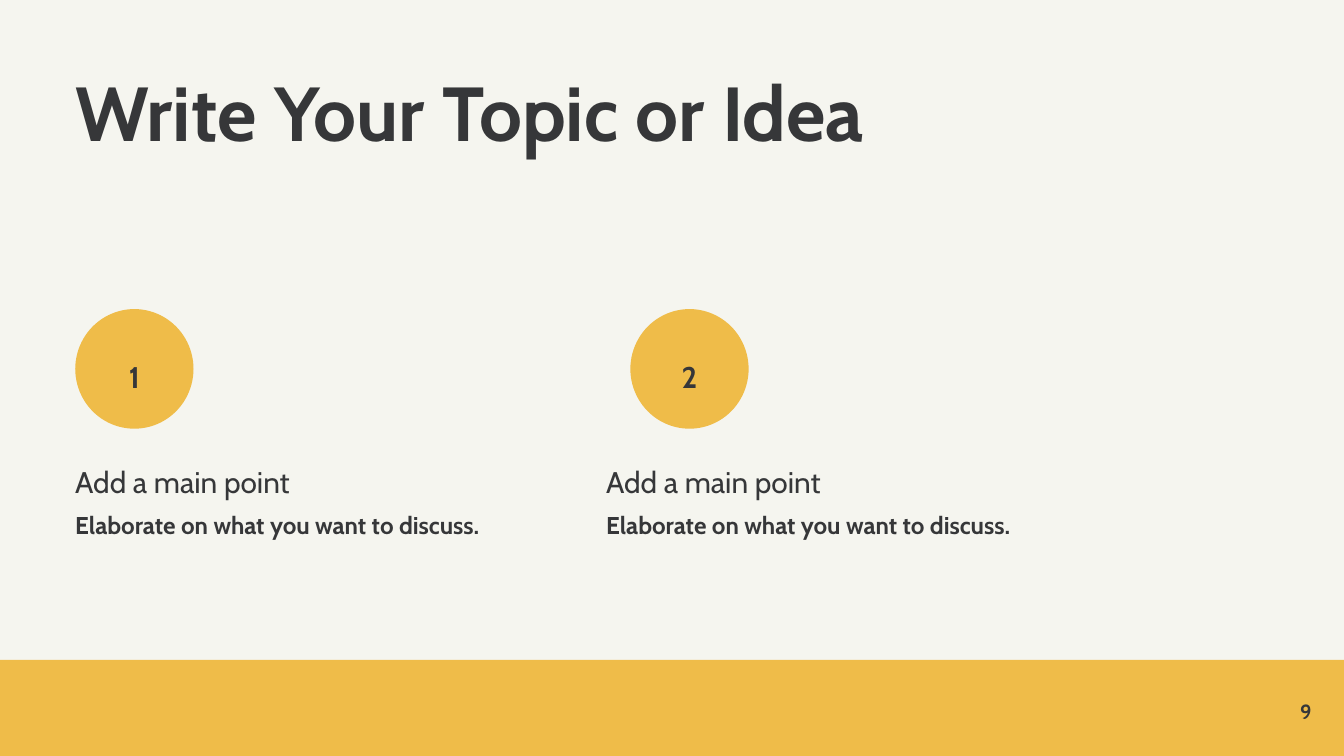
from pptx import Presentation
from pptx.dml.color import RGBColor
from pptx.enum.shapes import MSO_SHAPE
from pptx.enum.text import MSO_ANCHOR, MSO_AUTO_SIZE, PP_ALIGN
from pptx.util import Inches, Pt
from lxml.etree import SubElement
from pptx.oxml.ns import qn

COLORS = {"paper": "F5F5EF", "ink": "363739", "accent": "EFBC49"}
FONT = "Cabin"


def write(shape, box, runs, align=PP_ALIGN.LEFT, spacing=1.0, anchor=MSO_ANCHOR.TOP):
    """Place a shape and fill it with one paragraph, one (text, size, bold) per line."""
    shape.left, shape.top, shape.width, shape.height = map(Inches, box)
    frame = shape.text_frame
    frame_format = {
        "margin_left": 0, "margin_top": 0, "margin_right": 0, "margin_bottom": 0,
        "word_wrap": True, "auto_size": MSO_AUTO_SIZE.NONE, "vertical_anchor": anchor,
    }
    for name, value in frame_format.items():
        setattr(frame, name, value)
    paragraph = frame.paragraphs[0]
    paragraph_format = {"alignment": align, "line_spacing": spacing, "space_before": Pt(0)}
    for name, value in paragraph_format.items():
        setattr(paragraph, name, value)
    for i, (text, size, bold) in enumerate(runs):
        if i:
            paragraph.add_line_break()
        run = paragraph.add_run()
        run.text = text
        font_format = {"name": FONT, "size": Pt(size), "bold": bold}
        for name, value in font_format.items():
            setattr(run.font, name, value)
        run.font.color.rgb = RGBColor.from_string(COLORS["ink"])
    return paragraph


def add_accent(kind, *box):
    accent = slide.shapes.add_shape(kind, *map(Inches, box))
    accent.shadow.inherit = False
    accent.fill.solid()
    accent.fill.fore_color.rgb = RGBColor.from_string(COLORS["accent"])
    accent.line.fill.background()


presentation = Presentation()
presentation.slide_width = Inches(10)
presentation.slide_height = Inches(10 * 9 / 16)
slide = presentation.slides.add_slide(presentation.slide_layouts[3])
slide.background.fill.solid()
slide.background.fill.fore_color.rgb = RGBColor.from_string(COLORS["paper"])

write(slide.shapes.title, (0.56, 0.56, 7.09, 0.79),
      [("Write Your Topic or Idea", 41, True)], spacing=0.9)

# Numbered points: number, circle left, text left
points = [(1, 0.56, 0.56), (2, 4.69, 4.51)]
for number, circle_left, text_left in points:
    add_accent(MSO_SHAPE.OVAL, circle_left, 2.3, 0.88, 0.89)
    label = slide.shapes.add_textbox(0, 0, 0, 0)
    write(label, (circle_left + 0.23, 2.6, 0.42, 0.27), [(str(number), 16, True)],
          PP_ALIGN.CENTER, 1.25)

    point = write(slide.placeholders[number], (text_left, 3.34, 3.46, 1.53),
                  [("Add a main point", 16, False),
                   ("Elaborate on what you want to discuss.", 13, True)], spacing=1.4)
    properties = point._p.get_or_add_pPr()
    properties.set("marL", "0")
    properties.set("indent", "0")
    SubElement(properties, qn("a:buNone"))

# Footer band, down to the bottom edge
band_top = 4.91
add_accent(MSO_SHAPE.RECTANGLE, 0, band_top, 10, presentation.slide_height.inches - band_top)
page_number = slide.shapes.add_textbox(0, 0, 0, 0)
write(page_number, (9.16, 5.19, 0.6, 0.2), [("9", 11, True)],
      PP_ALIGN.RIGHT, anchor=MSO_ANCHOR.MIDDLE)

presentation.save("out.pptx")
